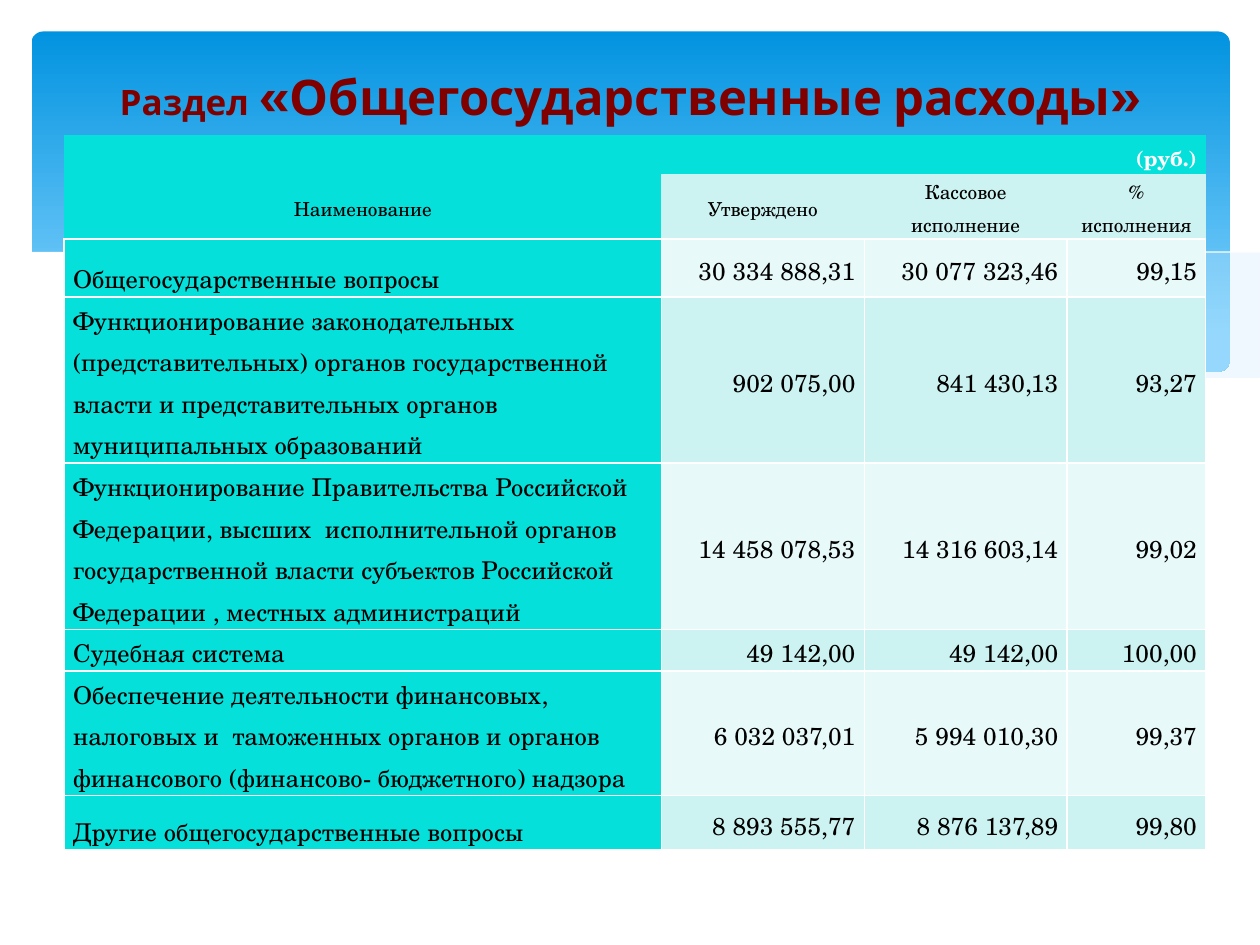
from dataclasses import dataclass

from lxml import etree
from pptx import Presentation
from pptx.dml.color import RGBColor
from pptx.enum.shapes import MSO_SHAPE
from pptx.enum.text import MSO_ANCHOR, PP_ALIGN
from pptx.oxml.ns import qn
from pptx.util import Inches, Pt

ROUND = MSO_SHAPE.ROUNDED_RECTANGLE
LEFT, CENTER, RIGHT = PP_ALIGN.LEFT, PP_ALIGN.CENTER, PP_ALIGN.RIGHT
MIDDLE, BOTTOM = MSO_ANCHOR.MIDDLE, MSO_ANCHOR.BOTTOM

COLORS = {
    "white": "FFFFFF", "black": "000000", "maroon": "800000",
    "sky": "0293E0", "pale": "83D3FE", "mist": "C6E7FC",
    "teal": "05E0DB", "tint": "CCF3F1", "light": "E7F9F8",
}
SERIF, SANS = "TeX Gyre Schola", "Cabin"


@dataclass
class Wave:
    points: list[tuple[float, float]]
    fill: str | None = None
    alpha: int = 100


@dataclass
class Style:
    fill: str
    size: int = 14
    align: int = RIGHT
    anchor: int = MIDDLE
    color: str = "black"
    bold: bool = False
    lined: bool = True


WAVES = [
    Wave([(9.76, 2), (9.48, 2.04), (9.21, 2.1), (8.91, 2.16), (8.61, 2.23),
          (8.05, 2.37), (7.53, 2.48), (7.06, 2.57), (6.61, 2.65), (6.91, 2.69),
          (7.32, 2.74), (7.69, 2.77), (8.03, 2.78), (8.35, 2.77), (8.63, 2.75),
          (8.89, 2.72), (9.13, 2.67), (9.35, 2.62), (9.49, 2.57), (9.63, 2.52),
          (9.76, 2.47)], "mist", 29),
    Wave([(8.93, 2.73), (8.66, 2.69), (8.07, 2.6), (7.41, 2.47), (6.68, 2.31),
          (6.29, 2.22), (5.84, 2.11), (5.41, 2.03), (5.02, 1.96), (4.65, 1.91),
          (4.2, 1.87), (3.8, 1.85), (3.44, 1.86), (3.13, 1.88), (2.86, 1.91),
          (3.23, 1.96), (3.62, 2.03), (4.04, 2.11), (4.49, 2.22), (5.3, 2.4),
          (5.84, 2.52), (6.34, 2.61), (6.8, 2.68), (7.22, 2.74), (7.61, 2.77),
          (7.96, 2.78), (8.38, 2.78), (8.67, 2.76)], "mist", 40),
    Wave([(3.09, 1.95), (3.28, 1.92), (3.53, 1.89), (3.87, 1.87), (4.16, 1.87),
          (4.5, 1.88), (4.89, 1.9), (5.33, 1.94), (5.82, 2), (6.36, 2.08),
          (6.95, 2.19), (7.6, 2.33), (8.31, 2.51), (9.07, 2.72)]),
    Wave([(6.13, 2.57), (6.53, 2.46), (6.95, 2.35), (7.48, 2.23), (8.06, 2.1),
          (8.66, 1.99), (8.95, 1.94), (9.24, 1.9), (9.51, 1.87), (9.75, 1.85)]),
    Wave([(9.77, 2.46), (9.59, 2.53), (9.4, 2.59), (9.2, 2.65), (8.99, 2.69),
          (8.75, 2.73), (8.5, 2.75), (8.09, 2.77), (7.61, 2.75), (7.08, 2.7),
          (6.48, 2.62), (5.79, 2.5), (5.03, 2.33), (4.47, 2.2), (3.91, 2.07),
          (3.4, 1.97), (2.92, 1.9), (2.5, 1.86), (2.11, 1.84), (1.77, 1.84),
          (1.46, 1.85), (1.19, 1.87), (0.95, 1.91), (0.76, 1.95), (0.59, 1.99),
          (0.46, 2.03), (0.36, 2.07), (0.23, 2.13), (0.23, 3.29), (9.77, 3.29)],
         "white"),
]

COLS = [4.74, 1.61, 1.61, 1.1]
ROWS = [0.31, 0.51, 0.46, 1.16, 1.22, 0.3, 0.93, 0.43]
HEADS = ["Наименование", "Утверждено", "Кассовое исполнение", "% исполнения"]
BODY = [
    ("Общегосударственные вопросы", "30 334 888,31", "30 077 323,46", "99,15"),
    ("Функционирование законодательных (представительных) органов "
     "государственной власти и представительных органов муниципальных "
     "образований", "902 075,00", "841 430,13", "93,27"),
    ("Функционирование Правительства Российской Федерации, высших  "
     "исполнительной органов государственной власти субъектов Российской "
     "Федерации , местных администраций",
     "14 458 078,53", "14 316 603,14", "99,02"),
    ("Судебная система", "49 142,00", "49 142,00", "100,00"),
    ("Обеспечение деятельности финансовых, налоговых и  таможенных органов и "
     "органов финансового (финансово- бюджетного) надзора",
     "6 032 037,01", "5 994 010,30", "99,37"),
    ("Другие общегосударственные вопросы",
     "8 893 555,77", "8 876 137,89", "99,80"),
]


def rgb(name: str) -> RGBColor:
    return RGBColor.from_string(COLORS[name])


def draw_panel(shapes) -> None:
    panel = shapes.add_shape(ROUND, Inches(0.25), Inches(0.25),
                             Inches(9.51), Inches(2.7))
    panel.adjustments[0] = 0.034
    panel.shadow.inherit = False
    panel.line.fill.background()
    panel.fill.gradient()
    panel.fill.gradient_angle = 270
    stops = panel.fill.gradient_stops
    for stop, name, place in zip(stops, ("sky", "pale"), (0, 0.9)):
        stop.color.rgb = rgb(name)
        stop.position = place


def draw_wave(shapes, wave: Wave) -> None:
    start, *rest = wave.points
    path = shapes.build_freeform(*start, scale=Inches(1))
    path.add_line_segments(rest, close=wave.fill is not None)
    shape = path.convert_to_shape()
    shape.shadow.inherit = False
    if wave.fill is None:
        shape.fill.background()
        shape.line.color.rgb = rgb("white")
        shape.line.width = Pt(0)
        return
    shape.line.fill.background()
    shape.fill.solid()
    shape.fill.fore_color.rgb = rgb(wave.fill)
    if wave.alpha < 100:
        color = shape.element.spPr.find(".//" + qn("a:srgbClr"))
        etree.SubElement(color, qn("a:alpha"), val=str(wave.alpha * 1000))


def set_edges(cell, lined: bool) -> None:
    props = cell._tc.get_or_add_tcPr()
    for side in ("lnL", "lnR", "lnT", "lnB"):
        edge = etree.SubElement(props, qn(f"a:{side}"), w=str(Pt(1)))
        if lined and side != "lnT":
            fill = etree.SubElement(edge, qn("a:solidFill"))
            etree.SubElement(fill, qn("a:srgbClr"), val=COLORS["white"])
        elif not lined:
            etree.SubElement(edge, qn("a:noFill"))
        else:
            props.remove(edge)


def fill_cell(cell, text: str, style: Style) -> None:
    set_edges(cell, style.lined)
    cell.fill.solid()
    cell.fill.fore_color.rgb = rgb(style.fill)
    cell.vertical_anchor = style.anchor
    cell.margin_left = cell.margin_right = Inches(0.07)
    cell.margin_top = cell.margin_bottom = 0
    cell.text = text
    para = cell.text_frame.paragraphs[0]
    para.alignment = style.align
    para.line_spacing = 1.15
    font = para.font
    font.name, font.size, font.bold = SERIF, Pt(style.size), style.bold
    font.color.rgb = rgb(style.color)


def draw_table(shapes) -> None:
    table = shapes.add_table(len(ROWS), len(COLS), Inches(0.51), Inches(1.07),
                             Inches(sum(COLS)), Inches(sum(ROWS))).table
    table.first_row = table.horz_banding = False
    for col, width in zip(table.columns, COLS):
        col.width = Inches(width)
    for row, height in zip(table.rows, ROWS):
        row.height = Inches(height)

    # Unit row and column heads
    table.cell(0, 0).merge(table.cell(0, len(COLS) - 1))
    fill_cell(table.cell(0, 0), "(руб.)",
              Style("teal", 12, RIGHT, BOTTOM, "white", True, False))
    for c, text in enumerate(HEADS):
        fill = "tint" if c else "teal"
        fill_cell(table.cell(1, c), text, Style(fill, 11, CENTER, lined=False))

    # Spending rows
    for r, (name, *sums) in enumerate(BODY):
        fill_cell(table.cell(r + 2, 0), name,
                  Style("teal", align=LEFT, anchor=BOTTOM))
        for c, text in enumerate(sums, 1):
            fill_cell(table.cell(r + 2, c), text,
                      Style("tint" if r % 2 else "light"))


def set_title(shapes) -> None:
    title = shapes.title
    title.left, title.top = Inches(0.5), Inches(0.37)
    title.width, title.height = Inches(9), Inches(0.78)
    title.text_frame.vertical_anchor = MIDDLE
    para = title.text_frame.paragraphs[0]
    para.alignment = CENTER
    para.font.name, para.font.bold = SANS, True
    para.font.color.rgb = rgb("maroon")
    for text, size in (("Раздел", 20), (" «Общегосударственные расходы»", 28)):
        run = para.add_run()
        run.text = text
        run.font.size = Pt(size)
    shapes.element.append(title.element)  # bring to front


def main() -> None:
    deck = Presentation()
    deck.slide_width, deck.slide_height = Inches(10), Inches(7.5)
    shapes = deck.slides.add_slide(deck.slide_layouts[5]).shapes
    draw_panel(shapes)
    for wave in WAVES:
        draw_wave(shapes, wave)
    draw_table(shapes)
    set_title(shapes)
    deck.save("out.pptx")


if __name__ == "__main__":
    main()
